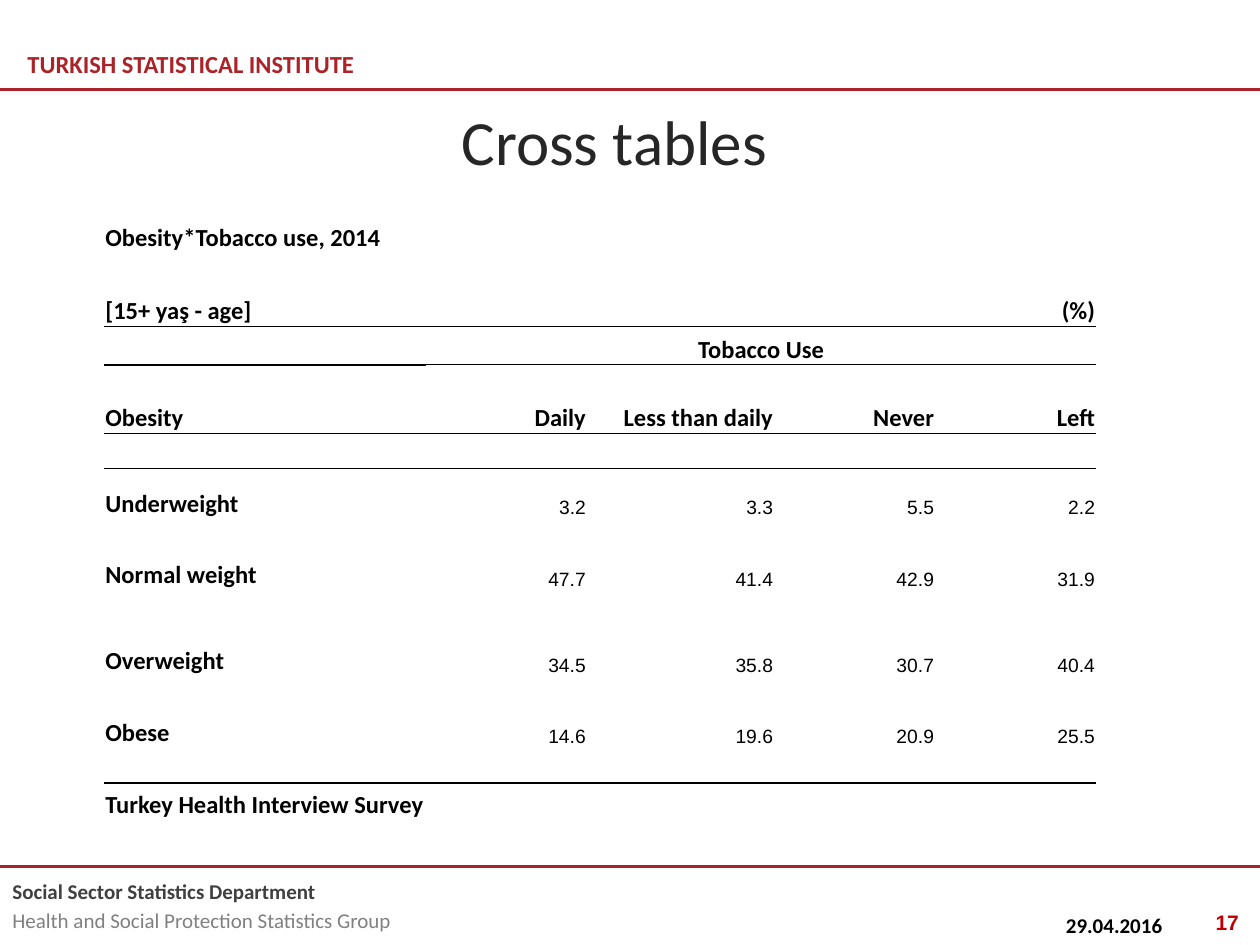
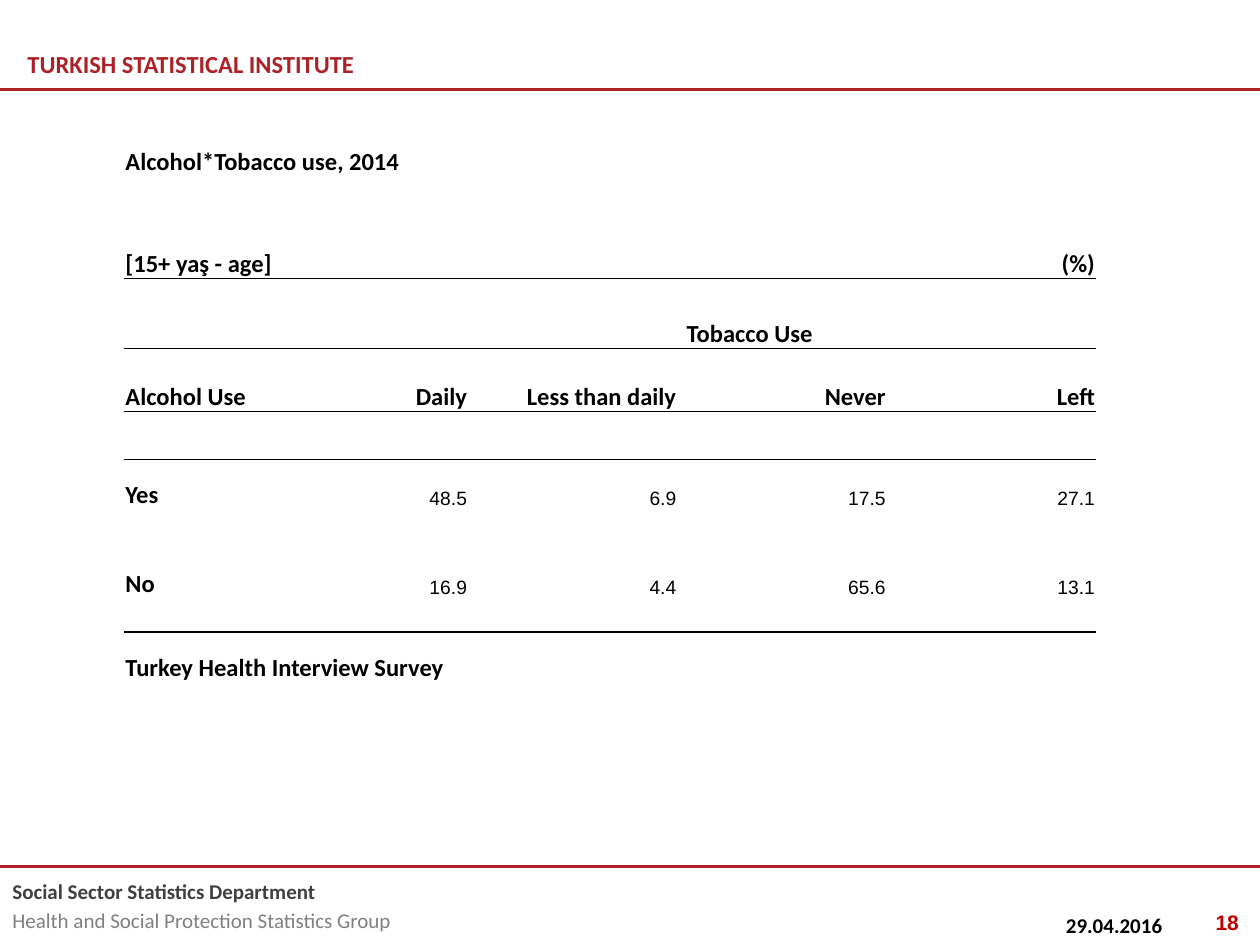
from lxml import etree
from pptx import Presentation
from pptx.dml.color import RGBColor
from pptx.enum.shapes import MSO_CONNECTOR
from pptx.enum.text import MSO_ANCHOR, PP_ALIGN
from pptx.oxml import parse_xml
from pptx.oxml.ns import nsdecls, qn
from pptx.util import Pt

LEFT, CENTER, RIGHT = PP_ALIGN.LEFT, PP_ALIGN.CENTER, PP_ALIGN.RIGHT
TOP, MIDDLE, BOTTOM = MSO_ANCHOR.TOP, MSO_ANCHOR.MIDDLE, MSO_ANCHOR.BOTTOM
STRAIGHT = MSO_CONNECTOR.STRAIGHT

COLORS = {
    "brand": "AB2328",
    "number": "C00000",
    "title": "262626",
    "department": "404040",
    "group": "808080",
    "black": "000000",
}
PLAIN_TABLE_STYLE = "{2D5ABB26-0587-4C30-8999-92F81FD0307C}"
DATE = "29.04.2016"
USE_LEVELS = ["Daily", "Less than daily", "Never", "Left"]

PAGES = [
    {
        "number": "17",
        "title": "Cross tables",
        "caption": "Obesity*Tobacco use, 2014",
        "variable": "Obesity",
        "left": 59.5,
        "top": 122.5,
        "cols": [92, 92, 92, 107, 92, 92],
        "rows": [22, 20, 22, 22, 39, 20, 29, 20, 21, 20, 29, 20, 21, 20, 21],
        "data": {
            "Underweight": [3.2, 3.3, 5.5, 2.2],
            "Normal weight": [47.7, 41.4, 42.9, 31.9],
            "Overweight": [34.5, 35.8, 30.7, 40.4],
            "Obese": [14.6, 19.6, 20.9, 25.5],
        },
    },
    {
        "number": "18",
        "title": None,
        "caption": "Alcohol*Tobacco use, 2014",
        "variable": "Alcohol Use",
        "left": 71,
        "top": 71.3,
        "cols": [79.7, 79.7, 37.2, 119.6, 119.6, 119.6],
        "rows": [30, 27, 31, 40, 36, 27, 29, 22, 29, 19, 29],
        "data": {
            "Yes": [48.5, 6.9, 17.5, 27.1],
            "No": [16.9, 4.4, 65.6, 13.1],
        },
    },
]


def write(p, text, size=14, bold=True, color="black", font="Calibri", align=LEFT):
    """Add one formatted run to a paragraph and return it."""
    p.alignment = align
    r = p.add_run()
    r.text = text
    r.font.size = Pt(size)
    r.font.bold = bold
    r.font.name = font
    r.font.color.rgb = RGBColor.from_string(COLORS[color])
    return r


def add_box(slide, left, top, width, height, anchor=TOP):
    """Add a wrapping text box and return its text frame."""
    tf = slide.shapes.add_textbox(Pt(left), Pt(top), Pt(width), Pt(height)).text_frame
    tf.word_wrap = True
    tf.vertical_anchor = anchor
    return tf


prs = Presentation()
prs.slide_width, prs.slide_height = Pt(720), Pt(540)

for page in PAGES:
    slide = prs.slides.add_slide(prs.slide_layouts[6])

    # Header, footer and the two rules
    tf = add_box(slide, 8.6, 22.3, 255, 28, MIDDLE)
    write(tf.paragraphs[0], "TURKISH STATISTICAL INSTITUTE", color="brand")
    tf = add_box(slide, 0, 498.2, 309, 39.6)
    write(tf.paragraphs[0], "Social Sector Statistics Department", size=12,
          color="department")
    p = tf.add_paragraph()
    p.space_before = Pt(2.4)
    write(p, "Health and Social Protection Statistics Group", size=12, bold=False,
          color="group")
    for y in (51, 495):
        line = slide.shapes.add_connector(STRAIGHT, 0, Pt(y), prs.slide_width, Pt(y))
        line.line.color.rgb = RGBColor.from_string(COLORS["brand"])
        line.line.width = Pt(1.5)
        etree.SubElement(line._element.spPr, qn("a:effectLst"))

    if page["title"]:
        tf = add_box(slide, 27, 54.7, 648, 51, MIDDLE)
        write(tf.paragraphs[0], page["title"], size=36, bold=False, color="title",
              align=CENTER)

    # Cross table
    cols, rows, data = page["cols"], page["rows"], page["data"]
    last = len(rows) - 1
    frame = slide.shapes.add_table(len(rows), len(cols), Pt(page["left"]), Pt(page["top"]),
                                   Pt(sum(cols)), Pt(sum(rows)))
    table = frame.table
    table.first_row = table.horz_banding = False
    table._tbl.tblPr.find(qn("a:tableStyleId")).text = PLAIN_TABLE_STYLE
    for column, width in zip(table.columns, cols):
        column.width = Pt(width)
    for row, height in zip(table.rows, rows):
        row.height = Pt(height)

    # (row, column): text, last spanned column, alignment
    heads = {
        (0, 0): (page["caption"], 4, LEFT),
        (2, 0): ("[15+ yaş - age]", 1, LEFT),
        (2, 5): ("(%)", 5, RIGHT),
        (3, 2): ("Tobacco Use", 5, CENTER),
        (4, 0): (page["variable"], 1, LEFT),
        (last, 0): ("Turkey Health Interview Survey", 3, LEFT),
    }
    for c, level in enumerate(USE_LEVELS, 2):
        heads[4, c] = (level, c, RIGHT)
    for i, category in enumerate(data):
        heads[6 + 2 * i, 0] = (category, 1, LEFT)
    for (r, c), (text, end, align) in heads.items():
        if end > c:
            table.cell(r, c).merge(table.cell(r, end))
        write(table.cell(r, c).text_frame.paragraphs[0], text, align=align)
    for i, values in enumerate(data.values()):
        for c, value in enumerate(values, 2):
            write(table.cell(6 + 2 * i, c).text_frame.paragraphs[0], f"{value:.1f}",
                  size=11, bold=False, font="Arial", align=RIGHT)

    # Each rule is the bottom of one row and the top of the next
    for r, first, weight in ((2, 0, 1), (3, 2, 0.5), (4, 0, 0.5), (last - 1, 0, 1)):
        for c in range(first, len(cols)):
            for below, side in enumerate(("lnB", "lnT")):
                table.cell(r + below, c)._tc.get_or_add_tcPr().append(parse_xml(
                    f'<a:{side} {nsdecls("a")} w="{Pt(weight)}"><a:solidFill>'
                    f'<a:srgbClr val="{COLORS["black"]}"/></a:solidFill></a:{side}>'))

    for cell in table.iter_cells():
        cell.fill.background()
        cell.vertical_anchor = BOTTOM
        cell.margin_left = cell.margin_right = cell.margin_top = Pt(0.7)
        cell.margin_bottom = 0
        if not cell.text_frame.text:
            etree.SubElement(cell.text_frame.paragraphs[0]._p, qn("a:endParaRPr"), sz="1100")

    # Date and slide number
    tf = add_box(slide, 602, 517.7, 118, 22)
    write(tf.paragraphs[0], DATE, size=12)
    tf = add_box(slide, 547, 516.2, 168, 23)
    r = write(tf.paragraphs[0], page["number"], size=12, color="number", font="Arial",
              align=RIGHT)
    r.font._element.insert(0, parse_xml(
        f'<a:ln {nsdecls("a")} w="{Pt(0.75)}"><a:solidFill>'
        f'<a:srgbClr val="{COLORS["brand"]}"/></a:solidFill></a:ln>'))

prs.save("out.pptx")
